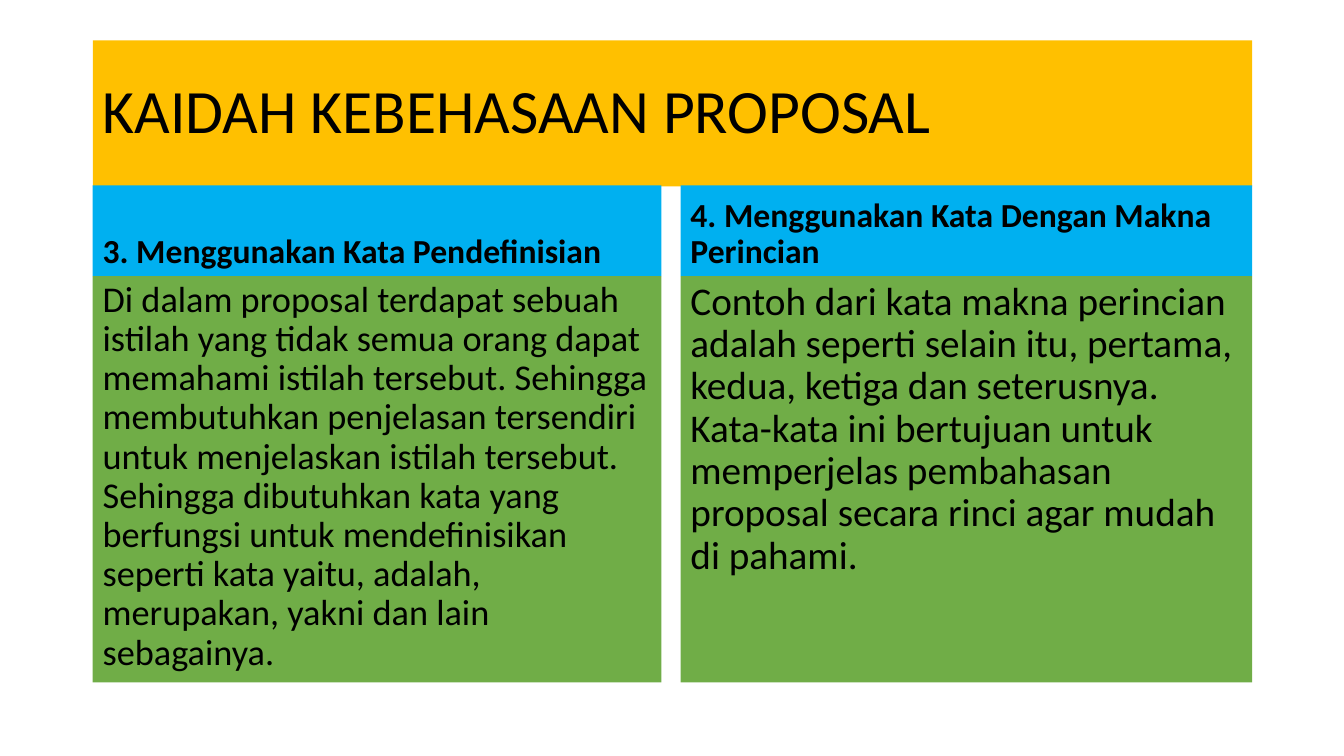
"""Build a slide with a title band and two columns of heading and explanation."""
import pptx
import pptx.dml.color
import pptx.enum.shapes
import pptx.enum.text
import pptx.util

TITLE = "KAIDAH KEBEHASAAN PROPOSAL"
COLUMNS = [
    {
        "heading": "3. Menggunakan Kata Pendefinisian",
        "body": "Di dalam proposal terdapat sebuah istilah yang tidak semua orang dapat "
                "memahami istilah tersebut. Sehingga membutuhkan penjelasan tersendiri "
                "untuk menjelaskan istilah tersebut. Sehingga dibutuhkan kata yang "
                "berfungsi untuk mendefinisikan seperti kata yaitu, adalah, merupakan, "
                "yakni dan lain sebagainya.",
        "body_size": 25.9,
        "width": 5.64,
    },
    {
        "heading": "4. Menggunakan Kata Dengan Makna Perincian",
        "body": "Contoh dari kata makna perincian adalah seperti selain itu, pertama, "
                "kedua, ketiga dan seterusnya. Kata-kata ini bertujuan untuk memperjelas "
                "pembahasan proposal secara rinci agar mudah di pahami.",
        "body_size": 28,
        "width": 5.67,
    },
]
SLIDE_WIDTH, SLIDE_HEIGHT = 13.33, 7.5
LEFT, CONTENT_WIDTH = 0.92, 11.5
TITLE_TOP, TITLE_HEIGHT = 0.4, 1.45
HEADING_TOP, HEADING_HEIGHT, BODY_HEIGHT = 1.84, 0.9, 4.03
GAP = CONTENT_WIDTH - sum(column["width"] for column in COLUMNS)
GOLD, BLUE, GREEN, BLACK = "FFC000", "00B0F0", "70AD47", "000000"
ANCHOR = pptx.enum.text.MSO_ANCHOR


def color(value):
    """Return the colour for a hex string."""
    return pptx.dml.color.RGBColor.from_string(value)


def place(shape, left, top, width, height, fill):
    """Position a shape in inches and give it a plain fill."""
    shape.left, shape.top, shape.width, shape.height = (
        pptx.util.Inches(length) for length in (left, top, width, height))
    shape.fill.solid()
    shape.fill.fore_color.rgb = color(fill)
    shape.line.fill.background()


def write(shape, text, size, anchor, bold=False):
    """Write one left-aligned paragraph into a shape."""
    frame = shape.text_frame
    frame.text = text
    frame.word_wrap = True
    frame.auto_size = pptx.enum.text.MSO_AUTO_SIZE.NONE
    frame.vertical_anchor = anchor
    paragraph = frame.paragraphs[0]
    paragraph.alignment = pptx.enum.text.PP_ALIGN.LEFT
    paragraph.line_spacing = 0.9
    paragraph.space_before = pptx.util.Pt(0)
    font = paragraph.runs[0].font
    font.name, font.size, font.bold = "Calibri", pptx.util.Pt(size), bold
    font.color.rgb = color(BLACK)


def add_panel(slide, left, top, width, height, fill, text, **text_format):
    """Add a filled rectangle holding text."""
    shape = slide.shapes.add_shape(pptx.enum.shapes.MSO_SHAPE.RECTANGLE, 0, 0, 0, 0)
    shape.shadow.inherit = False
    place(shape, left, top, width, height, fill)
    write(shape, text, **text_format)


def main():
    """Build and save the presentation."""
    presentation = pptx.Presentation()
    presentation.slide_width = pptx.util.Inches(SLIDE_WIDTH)
    presentation.slide_height = pptx.util.Inches(SLIDE_HEIGHT)
    slide = presentation.slides.add_slide(presentation.slide_layouts.get_by_name("Title Only"))
    title = slide.shapes.title
    place(title, LEFT, TITLE_TOP, CONTENT_WIDTH, TITLE_HEIGHT, GOLD)
    write(title, TITLE, size=44, anchor=ANCHOR.MIDDLE)

    left = LEFT
    for column in COLUMNS:
        width = column["width"]
        add_panel(slide, left, HEADING_TOP, width, HEADING_HEIGHT, BLUE,
                  column["heading"], size=24, anchor=ANCHOR.BOTTOM, bold=True)
        add_panel(slide, left, HEADING_TOP + HEADING_HEIGHT, width, BODY_HEIGHT, GREEN,
                  column["body"], size=column["body_size"], anchor=ANCHOR.TOP)
        left += width + GAP
    presentation.save("out.pptx")


if __name__ == "__main__":
    main()
